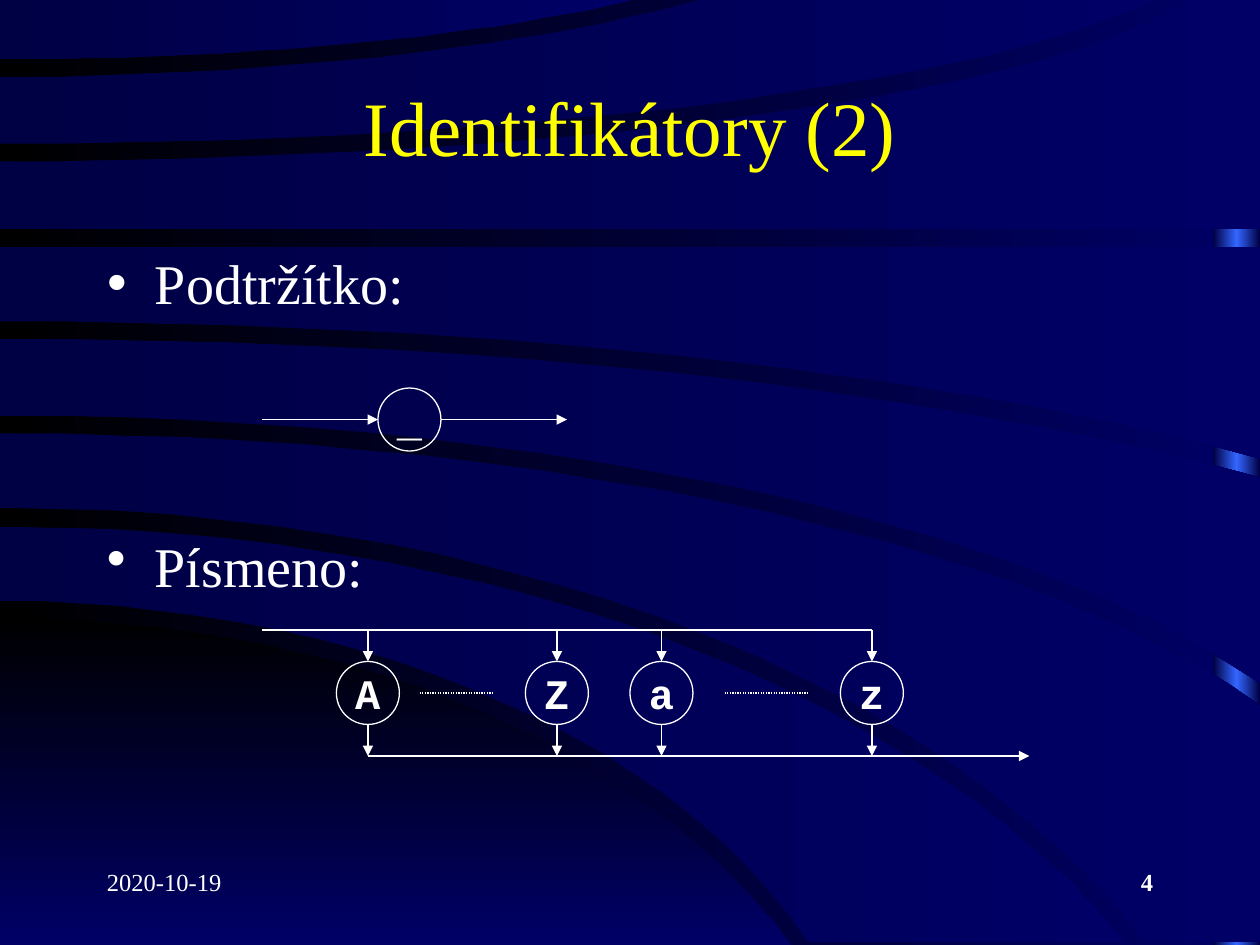
"""Build the slide on identifiers with its syntax diagrams for underscore and letter."""
from copy import deepcopy
from math import sqrt

from lxml.etree import SubElement
from pptx import Presentation
from pptx.dml.color import RGBColor
from pptx.enum.dml import MSO_LINE_DASH_STYLE as Dash
from pptx.enum.shapes import MSO_CONNECTOR as Connector, MSO_SHAPE as Shape
from pptx.enum.text import MSO_ANCHOR as Anchor, MSO_AUTO_SIZE as AutoSize, PP_ALIGN as Align
from pptx.oxml.ns import qn
from pptx.util import Inches, Pt

WHITE, YELLOW = "FFFFFF", "FFFF00"
BLACK, NAVY, BLUE, ACCENT = "000000", "000044", "000066", "3366FF"
SERIF, MONO = "Times New Roman", "Courier New"


def write(shape, text, size, color=WHITE, font=SERIF, bold=False, align=Align.LEFT, anchor=Anchor.TOP, bullet=False):
    """Put one formatted run into a shape, as a bulleted item if asked."""
    frame = shape.text_frame
    frame.word_wrap = font == SERIF
    frame.auto_size = AutoSize.NONE
    frame.vertical_anchor = anchor
    para = frame.paragraphs[0]
    para.alignment = align
    span = para.add_run()
    span.text = text
    span.font.name, span.font.size, span.font.bold = font, Pt(size), bold
    span.font.color.rgb = RGBColor.from_string(color)
    if bullet:
        props = para._p.get_or_add_pPr()
        props.set("marL", str(Inches(0.38)))
        props.set("indent", str(-Inches(0.38)))
        SubElement(SubElement(props, qn("a:spcBef")), qn("a:spcPct"), val="20000")
        SubElement(props, qn("a:buChar"), char="•")


def shade(fill, start, end, angle=0):
    """Give a fill a two-colour linear gradient."""
    fill.gradient()
    fill.gradient_angle = angle
    for stop, color, position in zip(fill.gradient_stops, (start, end), (0, 1)):
        stop.color.rgb = RGBColor.from_string(color)
        stop.position = position


deck = Presentation()
deck.slide_width, deck.slide_height = Inches(10), Inches(7.5)
page = deck.slides.add_slide(deck.slide_layouts[1])
shapes = page.shapes
shade(page.background.fill, BLACK, BLUE)

strip = shapes.add_shape(Shape.RECTANGLE, Inches(9.63), 0, Inches(0.37), Inches(7.5))
strip.shadow.inherit = False
strip.line.fill.background()
shade(strip.fill, NAVY, NAVY)
stops = strip._element.spPr.find(".//" + qn("a:gsLst"))
stops.insert(1, deepcopy(stops[0]))
middle = strip.fill.gradient_stops[1]
middle.position = 0.5
middle.color.rgb = RGBColor.from_string(ACCENT)

# Each edge is an elliptic arc: start height, end x, end y, flattening.
bands = [
    ((4.91, 6.28, 7.5, 2.4), (7.5, 6.28, 7.5, 0)),
    ((4.18, 8.93, 7.48, 2.95), (4.77, 6.42, 7.48, 2.48)),
    ((3.44, 10, 5.6, 8.4), (4.03, 9.09, 7.48, 2.94)),
    ((2.69, 10, 3.79, 16), (3.3, 10, 5.42, 8.55)),
    ((1.96, 10, 1.96, 0), (2.55, 10, 3.64, 18.4)),
    ((1.28, 9.43, 0, 32.6), (1.82, 10, 1.82, 0)),
    ((0.61, 5.56, 0, 17.4), (1.14, 9.17, 0, 31)),
    ((0, 5.01, 0, 0), (0.47, 5.01, 0, 24)),
]
steps = 24
for number, edges in enumerate(bands):
    arcs = []
    for start_y, end_x, end_y, flattening in edges:
        drop = end_y - start_y
        arc = []
        for step in range(steps + 1):
            part = step / steps
            x = part * sqrt(end_x ** 2 + flattening * drop ** 2 * (1 - part ** 2))
            arc.append((100 * x, 100 * (start_y + drop * part ** 2)))
        arcs.append(arc)
    upper, lower = arcs
    ends = upper[-1], lower[-1]
    outline = upper + [(max(ends)[0], min(ends)[1])] + lower[::-1]
    builder = shapes.build_freeform(*outline[0], scale=Inches(0.01))
    builder.add_line_segments(outline[1:], close=True)
    band = builder.convert_to_shape()
    band.shadow.inherit = False
    band.line.fill.background()
    if number == 0:
        shade(band.fill, BLACK, BLUE, 270)
    else:
        shade(band.fill, NAVY, BLUE)

title, body = shapes.title, page.placeholders[1]
letters_item, date_box, number_box = (shapes.add_textbox(0, 0, 0, 0) for _ in range(3))
for box, left, top, width, height in (
    (title, 0.75, 0.58, 8.5, 0.83),
    (body, 0.75, 1.92, 8.5, 0.58),
    (letters_item, 0.75, 4.17, 8.5, 0.67),
    (date_box, 0.75, 6.83, 2.08, 0.5),
    (number_box, 7.17, 6.83, 2.08, 0.5),
):
    box.left, box.top, box.width, box.height = (Inches(n) for n in (left, top, width, height))
    shapes._spTree.append(box._element)
write(title, "Identifikátory (2)", 44, YELLOW, align=Align.CENTER, anchor=Anchor.MIDDLE)
write(body, "Podtržítko:", 32, bullet=True)
write(letters_item, "Písmeno:", 32, bullet=True)
write(date_box, "2020-10-19", 14)
write(number_box, "4", 14, bold=True, align=Align.RIGHT)

underscore_x, underscore_y, radius = 3.25, 3.33, 0.25
entry_y, letter_y, exit_y = 5, 5.5, 6
letters = {"A": 2.92, "Z": 4.42, "a": 5.25, "z": 6.92}

nodes = [("_", underscore_x, underscore_y)] + [(sign, x, letter_y) for sign, x in letters.items()]
for sign, x, y in nodes:
    node = shapes.add_shape(Shape.OVAL, Inches(x - radius), Inches(y - radius), Inches(2 * radius), Inches(2 * radius))
    node.shadow.inherit = False
    node.fill.background()
    node.line.color.rgb = RGBColor.from_string(WHITE)
    node.line.width = Pt(0.75)
    write(node, sign, 24, font=MONO, bold=True, align=Align.CENTER, anchor=Anchor.MIDDLE)

links = [
    (2.08, underscore_y, underscore_x - radius, underscore_y, "arrow"),
    (underscore_x + radius, underscore_y, 4.5, underscore_y, "arrow"),
    (2.08, entry_y, letters["z"], entry_y, "plain"),
    (letters["A"], exit_y, 8.17, exit_y, "arrow"),
    (3.33, letter_y, 3.92, letter_y, "dotted"),
    (5.75, letter_y, 6.42, letter_y, "dotted"),
]
for x in letters.values():
    links.append((x, entry_y, x, letter_y - radius, "arrow"))
    links.append((x, letter_y + radius, x, exit_y, "arrow"))
for x1, y1, x2, y2, style in links:
    link = shapes.add_connector(Connector.STRAIGHT, Inches(x1), Inches(y1), Inches(x2), Inches(y2))
    link.line.color.rgb = RGBColor.from_string(WHITE)
    link.line.width = Pt(0.75)
    if style == "dotted":
        link.line.dash_style = Dash.ROUND_DOT
    if style == "arrow":
        SubElement(link.line._get_or_add_ln(), qn("a:tailEnd"), type="triangle")
    SubElement(link._element.spPr, qn("a:effectLst"))

deck.save("out.pptx")
